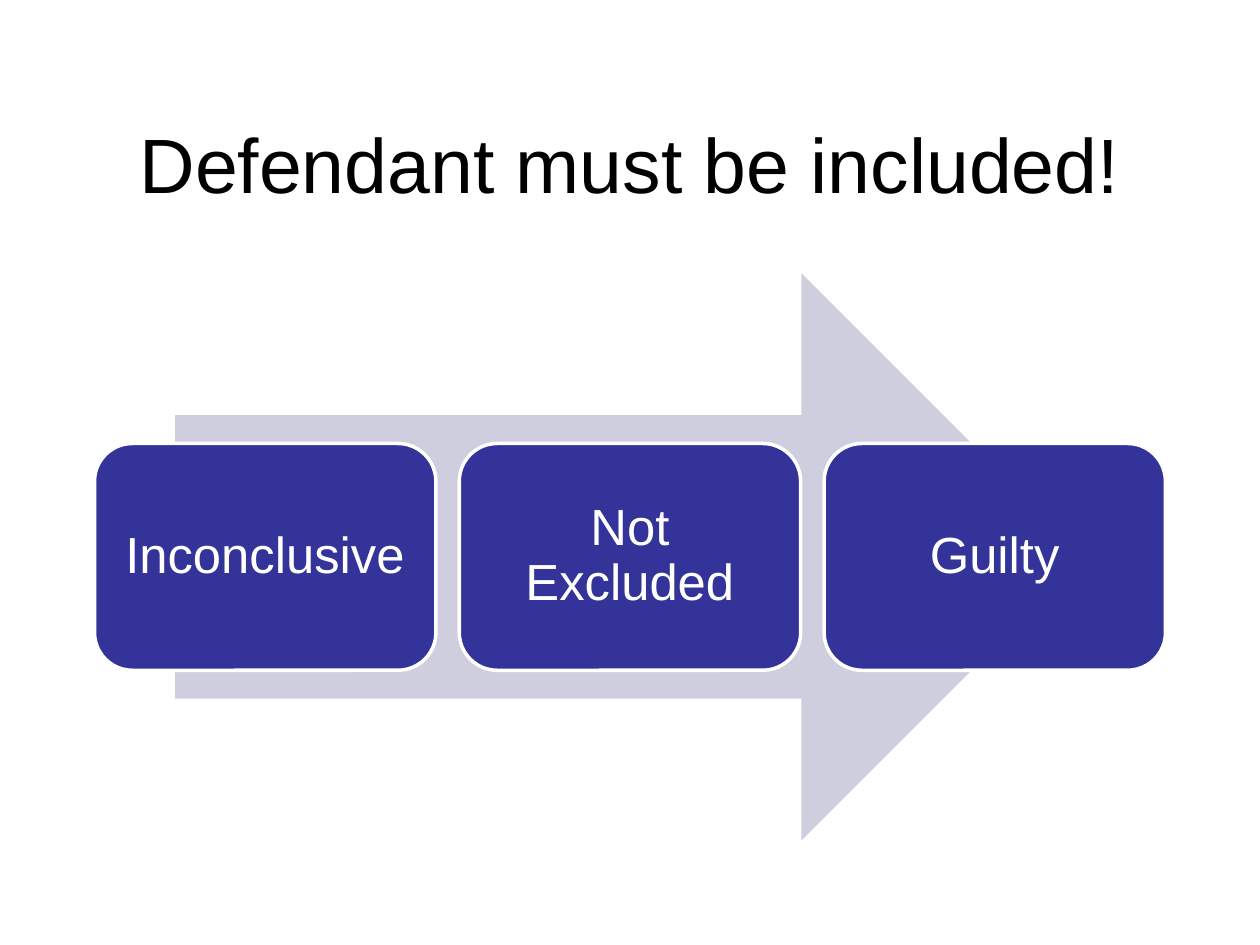
from pptx import Presentation
from pptx.dml.color import RGBColor
from pptx.enum.shapes import MSO_SHAPE
from pptx.enum.text import MSO_ANCHOR, PP_ALIGN
from pptx.util import Inches, Pt


def color(hex_code):
    return RGBColor.from_string(hex_code)


def write(frame, text, size, hex_code):
    frame.word_wrap = True
    frame.vertical_anchor = MSO_ANCHOR.MIDDLE
    para = frame.paragraphs[0]
    para.alignment = PP_ALIGN.CENTER
    span = para.add_run()
    span.text = text
    span.font.name = "Arial"
    span.font.size = Pt(size)
    span.font.color.rgb = color(hex_code)
    return para


deck = Presentation()
deck.slide_width, deck.slide_height = Inches(10), Inches(7.5)
page = deck.slides.add_slide(deck.slide_layouts[5])

# Title
title = page.shapes.title
title.left, title.top = Inches(0.75), Inches(0.67)
title.width, title.height = Inches(8.5), Inches(1.25)
write(title.text_frame, "Defendant must be included!", 44, "000000")

# Background arrow
arrow = page.shapes.add_shape(
    MSO_SHAPE.RIGHT_ARROW, Inches(1.39), Inches(2.17), Inches(7.22), Inches(4.5))
arrow.shadow.inherit = False
arrow.fill.solid()
arrow.fill.fore_color.rgb = color("CECEDE")
arrow.line.fill.background()

# Stages, evenly spaced between the title's edges
stages = ["Inconclusive", "Not Excluded", "Guilty"]
stage_width = 2.71
step = (8.5 - stage_width) / (len(stages) - 1)
for index, stage in enumerate(stages):
    box = page.shapes.add_shape(
        MSO_SHAPE.ROUNDED_RECTANGLE, Inches(0.75 + index * step), Inches(3.52),
        Inches(stage_width), Inches(1.8))
    box.shadow.inherit = False
    box.fill.solid()
    box.fill.fore_color.rgb = color("333399")
    box.line.color.rgb = color("FFFFFF")
    box.line.width = Pt(2)
    frame = box.text_frame
    frame.margin_left = frame.margin_right = Inches(0.12)
    frame.margin_top = frame.margin_bottom = Inches(0.12)
    para = write(frame, stage, 29, "FFFFFF")
    para.line_spacing = 0.9

deck.save("out.pptx")
